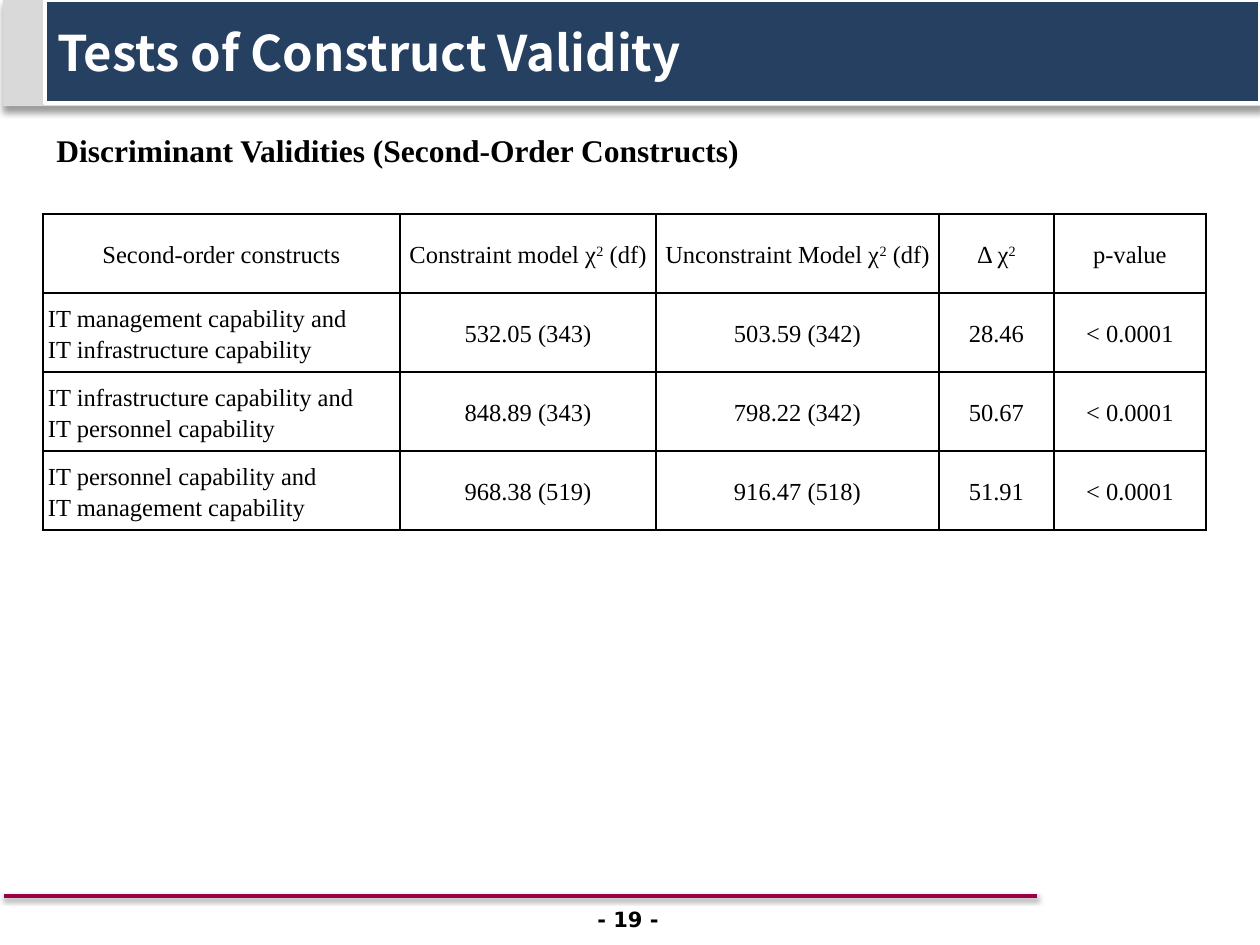
from dataclasses import dataclass

from lxml import etree
from pptx import Presentation
from pptx.dml.color import RGBColor
from pptx.enum.shapes import MSO_CONNECTOR, MSO_SHAPE
from pptx.enum.text import MSO_ANCHOR, PP_ALIGN
from pptx.oxml.ns import qn
from pptx.util import Emu, Pt

LEFT, CENTER = PP_ALIGN.LEFT, PP_ALIGN.CENTER
TOP, MIDDLE = MSO_ANCHOR.TOP, MSO_ANCHOR.MIDDLE
RECT, ROUND_RECT = MSO_SHAPE.RECTANGLE, MSO_SHAPE.ROUNDED_RECTANGLE
STRAIGHT = MSO_CONNECTOR.STRAIGHT
EMU_PER_PX = 914400 / 126


@dataclass(frozen=True)
class Theme:
    navy: str = "254061"
    grey: str = "D9D9D9"
    crimson: str = "9C0042"
    white: str = "FFFFFF"
    black: str = "000000"
    title_font: str = "Noto Sans CJK KR"
    body_font: str = "Times New Roman"
    number_font: str = "DejaVu Sans"
    title_size: int = 28
    heading_size: int = 18
    table_size: int = 14
    number_size: int = 12


THEME = Theme()
COLUMN_WIDTHS = (357, 256, 283, 115, 152)
ROW_HEIGHT = 79
CELL_INSET = 5
# A cell holds lines, and "^" switches superscript on and off within a line.
ROWS = (
    ("Second-order constructs", "Constraint model χ^2^ (df)",
     "Unconstraint Model χ^2^ (df)", "Δ χ^2^", "p-value"),
    ("IT management capability and\nIT infrastructure capability",
     "532.05 (343)", "503.59 (342)", "28.46", "< 0.0001"),
    ("IT infrastructure capability and\nIT personnel capability",
     "848.89 (343)", "798.22 (342)", "50.67", "< 0.0001"),
    ("IT personnel capability and\nIT management capability",
     "968.38 (519)", "916.47 (518)", "51.91", "< 0.0001"),
)


def px(n):
    return Emu(round(n * EMU_PER_PX))


def rgb(color):
    return RGBColor.from_string(color)


def style_font(font, name, size, color, bold=False):
    values = {"name": name, "size": Pt(size), "bold": bold}
    for key, value in values.items():
        setattr(font, key, value)
    font.color.rgb = rgb(color)


def add_shadow(shape, alpha, blur, dist):
    """Give a shape a downward black shadow; alpha in percent, lengths in points."""
    effects = etree.SubElement(shape._element.spPr, qn("a:effectLst"))
    shadow = etree.SubElement(effects, qn("a:outerShdw"), blurRad=str(Pt(blur)),
                              dist=str(Pt(dist)), dir="5400000", rotWithShape="0")
    color = etree.SubElement(shadow, qn("a:srgbClr"), val=THEME.black)
    etree.SubElement(color, qn("a:alpha"), val=str(alpha * 1000))


def add_block(slide, kind, box, fill, line=None):
    s = slide.shapes.add_shape(kind, *map(px, box))
    s.fill.solid()
    s.fill.fore_color.rgb = rgb(fill)
    if line:
        s.line.color.rgb = rgb(line)
        s.line.width = Pt(2.25)
    else:
        s.line.fill.background()
    return s


def write_line(shape, text, align, anchor, *font):
    tf = shape.text_frame
    tf.word_wrap = True
    tf.vertical_anchor = anchor
    p = tf.paragraphs[0]
    p.alignment = align
    r = p.add_run()
    r.text = text
    style_font(r.font, *font, bold=True)


def add_header(slide):
    band = add_block(slide, ROUND_RECT, (3, -1, 1260, 107), THEME.grey)
    band.adjustments[0] = 0
    add_shadow(band, 40, 4, 3)
    title = add_block(slide, RECT, (45, 0, 1215, 103), THEME.navy, THEME.white)
    title.shadow.inherit = False
    write_line(title, "Tests of Construct Validity", LEFT, MIDDLE,
               THEME.title_font, THEME.title_size, THEME.white)


def add_footer(slide):
    rule = slide.shapes.add_connector(STRAIGHT, px(4), px(896), px(1037), px(896))
    rule.line.color.rgb = rgb(THEME.crimson)
    rule.line.width = Pt(2)
    add_shadow(rule, 38, 3.1, 1.6)
    number = slide.shapes.add_textbox(px(481), px(900), px(294), px(35))
    write_line(number, "- 19 -", CENTER, TOP,
               THEME.number_font, THEME.number_size, THEME.black)


def set_borders(cell):
    tcPr = cell._tc.get_or_add_tcPr()
    for i, side in enumerate(("lnL", "lnR", "lnT", "lnB")):
        ln = etree.Element(qn(f"a:{side}"), w=str(Pt(1)))
        fill = etree.SubElement(ln, qn("a:solidFill"))
        etree.SubElement(fill, qn("a:srgbClr"), val=THEME.black)
        tcPr.insert(i, ln)


def fill_cell(cell, text, align):
    cell.fill.background()
    cell.vertical_anchor = MIDDLE
    for side in ("left", "right", "top", "bottom"):
        setattr(cell, f"margin_{side}", px(CELL_INSET))
    set_borders(cell)
    tf = cell.text_frame
    for i, line in enumerate(text.split("\n")):
        p = tf.add_paragraph() if i else tf.paragraphs[0]
        p.alignment = align
        p.line_spacing = 1.15
        for j, part in enumerate(line.split("^")):
            if not part:
                continue
            r = p.add_run()
            r.text = part
            style_font(r.font, THEME.body_font, THEME.table_size, THEME.black)
            if j % 2:
                r._r.get_or_add_rPr().set("baseline", "30000")


def add_validity_table(slide):
    frame = slide.shapes.add_table(
        len(ROWS), len(COLUMN_WIDTHS), px(43), px(214),
        px(sum(COLUMN_WIDTHS)), px(ROW_HEIGHT * len(ROWS)))
    table = frame.table
    table.first_row = table.horz_banding = False
    for column, width in zip(table.columns, COLUMN_WIDTHS):
        column.width = px(width)
    for i, texts in enumerate(ROWS):
        table.rows[i].height = px(ROW_HEIGHT)
        for j, text in enumerate(texts):
            fill_cell(table.cell(i, j), text, LEFT if i and not j else CENTER)


def main():
    prs = Presentation()
    prs.slide_width, prs.slide_height = px(1260), px(945)
    slide = prs.slides.add_slide(prs.slide_layouts[6])
    add_header(slide)
    add_footer(slide)
    heading = slide.shapes.add_textbox(px(44), px(125), px(1201), px(50))
    write_line(heading, "Discriminant Validities (Second-Order Constructs)", LEFT, TOP,
               THEME.body_font, THEME.heading_size, THEME.black)
    add_validity_table(slide)
    prs.save("out.pptx")


if __name__ == "__main__":
    main()
